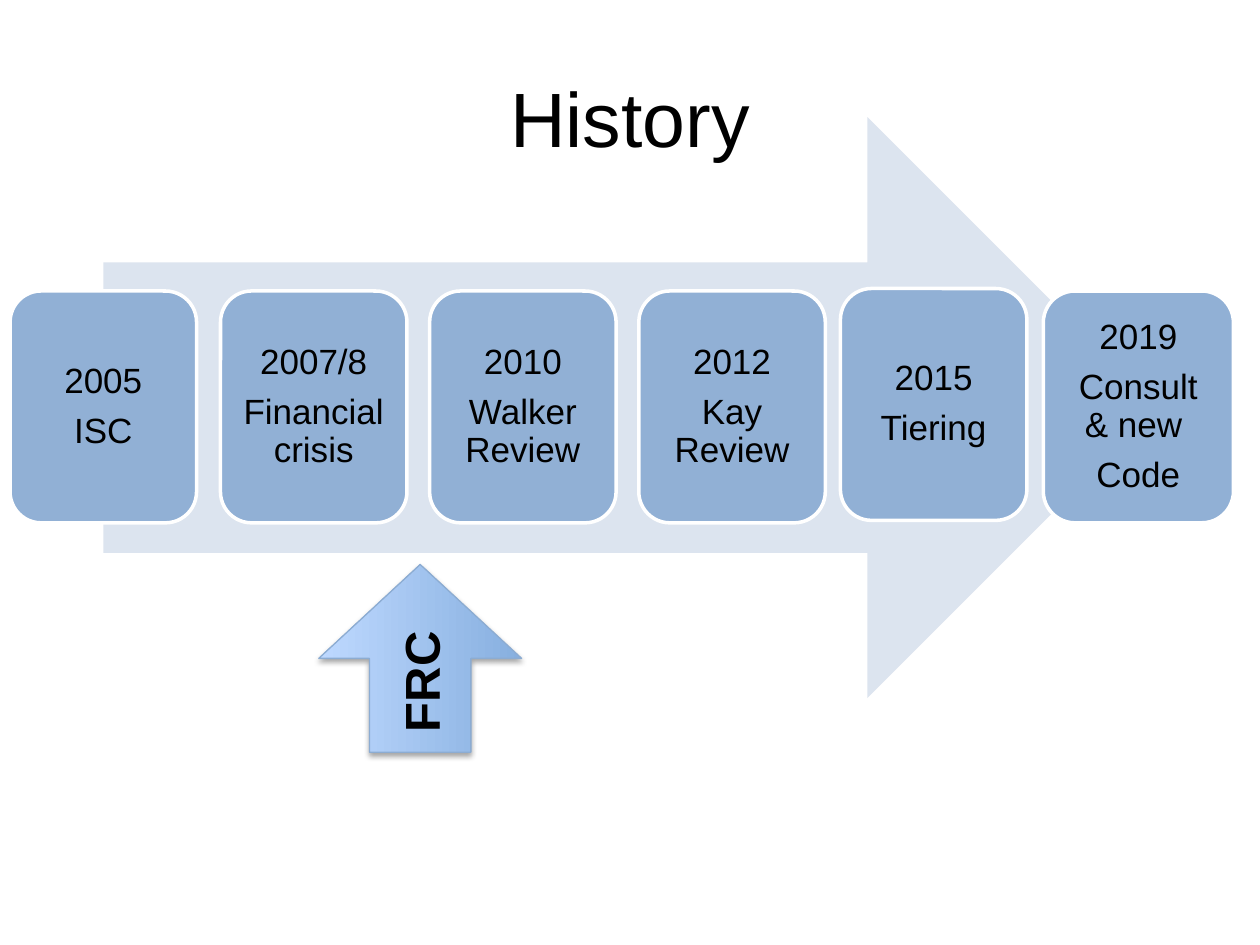
"""Build a timeline slide of stewardship milestones along a large arrow."""
from dataclasses import dataclass
from typing import Any

from lxml.etree import SubElement
from pptx import Presentation
from pptx.dml.color import RGBColor
from pptx.enum.shapes import MSO_SHAPE
from pptx.enum.text import MSO_ANCHOR, PP_ALIGN
from pptx.oxml.ns import qn
from pptx.shapes.autoshape import Shape
from pptx.slide import Slide
from pptx.util import Emu, Pt

EMU_PER_PX = 9144


@dataclass(frozen=True)
class Theme:
    font: str = "Arial"
    text: RGBColor = RGBColor(0x00, 0x00, 0x00)
    band: RGBColor = RGBColor(0xDC, 0xE4, 0xEF)
    card: RGBColor = RGBColor(0x91, 0xB0, 0xD5)
    card_line: RGBColor = RGBColor(0xFF, 0xFF, 0xFF)
    pointer_line: RGBColor = RGBColor(0x8C, 0xAC, 0xD2)
    pointer_dark: RGBColor = RGBColor(0x87, 0xAF, 0xDF)
    pointer_light: RGBColor = RGBColor(0xBE, 0xD9, 0xFF)
    title_size: int = 44
    card_size: int = 20
    pointer_size: int = 28


@dataclass(frozen=True)
class Box:
    left: int
    top: int
    width: int
    height: int


@dataclass(frozen=True)
class Milestone:
    lines: tuple[str, ...]
    left: int
    top: int = 231
    width: int = 148
    height: int = 184


THEME = Theme()
MILESTONES = (
    Milestone(("2005", "ISC"), 8),
    Milestone(("2007/8", "Financial crisis"), 175),
    Milestone(("2010", "Walker Review"), 341),
    Milestone(("2012", "Kay Review"), 507),
    Milestone(("2015", "Tiering"), 667, top=229),
    Milestone(("2019", "Consult & new ", "Code"), 828, width=151),
)


def px(length: int) -> Emu:
    """Turn px into EMU."""
    return Emu(length * EMU_PER_PX)


def apply(target: Any, values: dict[str, Any]) -> None:
    """Set each named attribute on the target."""
    for name, value in values.items():
        setattr(target, name, value)


def place(box: Box | Milestone) -> dict[str, Emu]:
    """Give the position and size of a box in EMU."""
    return {name: px(getattr(box, name)) for name in ("left", "top", "width", "height")}


def write(shape: Shape, lines: tuple[str, ...], size: int, bold: bool = False,
          **spacing: Any) -> None:
    """Fill a shape with centred paragraphs."""
    frame = shape.text_frame
    apply(frame, {"text": "\n".join(lines), "word_wrap": True,
                  "vertical_anchor": MSO_ANCHOR.MIDDLE})
    for paragraph in frame.paragraphs:
        apply(paragraph, {"alignment": PP_ALIGN.CENTER, **spacing})
        apply(paragraph.font, {"name": THEME.font, "size": Pt(size), "bold": bold})
        paragraph.font.color.rgb = THEME.text


def add_shape(slide: Slide, kind: MSO_SHAPE, box: Box | Milestone) -> Shape:
    """Add a preset shape without a shadow."""
    shape = slide.shapes.add_shape(kind, **place(box))
    shape.shadow.inherit = False
    return shape


def add_title(slide: Slide, text: str, box: Box) -> None:
    """Move and format the title placeholder."""
    title = slide.shapes.title
    apply(title, place(box))
    write(title, (text,), THEME.title_size)


def add_band(slide: Slide, box: Box) -> None:
    """Draw the pale arrow behind the milestones."""
    band = add_shape(slide, MSO_SHAPE.RIGHT_ARROW, box)
    band.fill.solid()
    band.fill.fore_color.rgb = THEME.band
    band.line.fill.background()


def add_card(slide: Slide, milestone: Milestone) -> None:
    """Draw one rounded milestone card."""
    card = add_shape(slide, MSO_SHAPE.ROUNDED_RECTANGLE, milestone)
    card.fill.solid()
    card.fill.fore_color.rgb = THEME.card
    card.line.color.rgb = THEME.card_line
    card.line.width = Pt(2)
    sides = ("left", "top", "right", "bottom")
    apply(card.text_frame, {f"margin_{side}": px(8) for side in sides})
    write(card, milestone.lines, THEME.card_size, line_spacing=0.9, space_after=Pt(7))


def add_pointer(slide: Slide, text: str, box: Box) -> None:
    """Draw the upward gradient arrow with its soft shadow."""
    pointer = add_shape(slide, MSO_SHAPE.RIGHT_ARROW, box)
    pointer.rotation = 270
    pointer.fill.gradient()
    pointer.fill.gradient_angle = 90
    stops = zip(pointer.fill.gradient_stops, (THEME.pointer_dark, THEME.pointer_light))
    for position, (stop, color) in enumerate(stops):
        stop.position = position
        stop.color.rgb = color
    pointer.line.color.rgb = THEME.pointer_line
    pointer.line.width = Pt(0.75)
    effects = pointer._element.spPr.find(qn("a:effectLst"))
    shadow = SubElement(effects, qn("a:outerShdw"), blurRad=str(Pt(3.1)),
                        dist=str(Pt(1.8)), dir="5400000", rotWithShape="0")
    color = SubElement(shadow, qn("a:srgbClr"), val=str(THEME.text))
    SubElement(color, qn("a:alpha"), val="35000")
    write(pointer, (text,), THEME.pointer_size, bold=True)


def main() -> None:
    """Build and save the slide."""
    presentation = Presentation()
    apply(presentation, {"slide_width": px(1000), "slide_height": px(750)})
    slide = presentation.slides.add_slide(presentation.slide_layouts.get_by_name("Title Only"))
    add_title(slide, "History", Box(50, 30, 900, 125))
    add_band(slide, Box(82, 93, 837, 461))
    for milestone in MILESTONES:
        add_card(slide, milestone)
    add_pointer(slide, "FRC", Box(259, 442, 149, 161))
    presentation.save("out.pptx")


if __name__ == "__main__":
    main()
